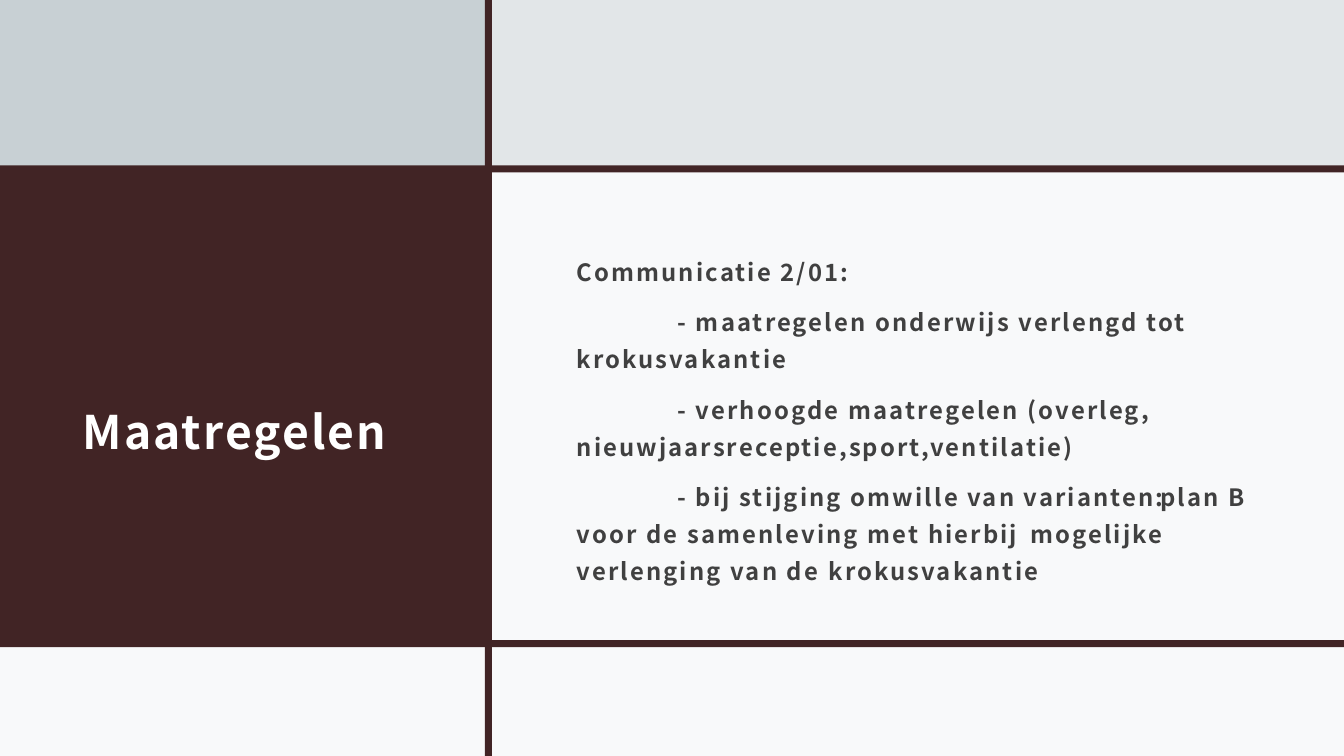
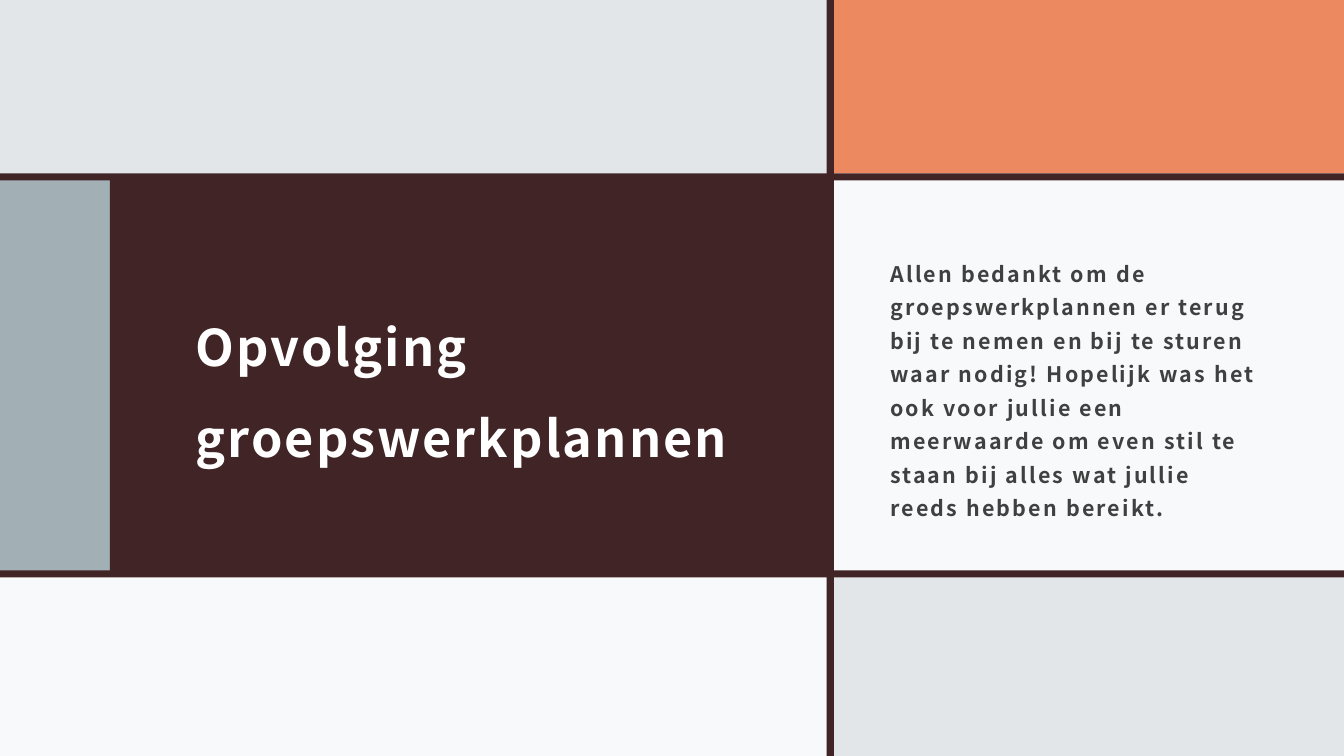
"""Build two slides with coloured panels, dark grid lines, a title and body text."""

from dataclasses import dataclass

from pptx import Presentation
from pptx.dml.color import RGBColor
from pptx.enum.shapes import MSO_SHAPE
from pptx.enum.text import MSO_ANCHOR
from pptx.util import Inches, Pt

RECTANGLE = MSO_SHAPE.RECTANGLE
MIDDLE = MSO_ANCHOR.MIDDLE

WIDTH, HEIGHT = 13.33, 7.5
LINE = 0.07
FONT = "Noto Sans CJK JP"
LETTER_SPACING = "150"

DARK = "412425"
PALE = "E2E6E8"
LIGHT = "F8F9FA"
MIST = "C8D0D4"
SLATE = "A2AFB5"
ORANGE = "ED8961"
WHITE = "FFFFFF"
GREY = "404040"


@dataclass(frozen=True)
class Box:
    left: float
    top: float
    width: float
    height: float


@dataclass(frozen=True)
class Panel:
    box: Box
    fill: str


@dataclass(frozen=True)
class Style:
    color: str
    line_spacing: float
    space_before: float = 0


@dataclass(frozen=True)
class TextBlock:
    box: Box
    size: float
    paragraphs: tuple[str, ...]
    indent: float = 0


@dataclass(frozen=True)
class SlideContent:
    panels: tuple[Panel, ...]
    column_line: float
    row_lines: tuple[float, ...]
    title: TextBlock
    body: TextBlock


TITLE_STYLE = Style(WHITE, 1.5)
BODY_STYLE = Style(GREY, 1.3, 9.3)

SLIDES = (
    SlideContent(
        panels=(
            Panel(Box(0, 1.64, 4.84, 4.78), DARK),
            Panel(Box(0, 0, 4.84, 1.66), MIST),
            Panel(Box(4.84, 1.66, 8.49, 4.76), LIGHT),
            Panel(Box(0, 6.41, WIDTH, 1.09), LIGHT),
        ),
        column_line=4.81,
        row_lines=(1.64, 6.35),
        title=TextBlock(Box(0.7, 2.14, 3.73, 3.98), 33, ("Maatregelen",)),
        body=TextBlock(
            Box(5.6, 2.14, 7.03, 3.98),
            17,
            (
                "Communicatie 2/01:",
                "- maatregelen onderwijs verlengd tot krokusvakantie",
                "- verhoogde maatregelen (overleg, nieuwjaarsreceptie,sport,ventilatie)",
                "- bij stijging omwille van varianten: \tplan B voor de samenleving "
                "met hierbij \tmogelijke verlenging van de \tkrokusvakantie",
            ),
            indent=1,
        ),
    ),
    SlideContent(
        panels=(
            Panel(Box(0, 1.77, 1.09, 3.91), SLATE),
            Panel(Box(1.09, 1.77, 7.16, 3.91), DARK),
            Panel(Box(8.24, 0, 5.09, 1.78), ORANGE),
            Panel(Box(8.27, 1.72, 5.06, 3.98), LIGHT),
            Panel(Box(0, 5.72, 8.2, 1.78), LIGHT),
        ),
        column_line=8.2,
        row_lines=(1.72, 5.66),
        title=TextBlock(
            Box(1.82, 2.21, 5.91, 3.04), 36, ("Opvolging groepswerkplannen",)
        ),
        body=TextBlock(
            Box(8.71, 2.34, 3.92, 2.98),
            15.3,
            (
                "Allen bedankt om de groepswerkplannen er terug bij te nemen en "
                "bij te sturen waar nodig! Hopelijk was het ook voor jullie een "
                "meerwaarde om even stil te staan bij alles wat jullie reeds "
                "hebben bereikt.",
            ),
        ),
    ),
)


def rgb(color: str) -> RGBColor:
    return RGBColor.from_string(color)


def place(box: Box) -> tuple[int, int, int, int]:
    return Inches(box.left), Inches(box.top), Inches(box.width), Inches(box.height)


def draw_panel(slide, panel: Panel) -> None:
    shape = slide.shapes.add_shape(RECTANGLE, *place(panel.box))
    shape.shadow.inherit = False
    shape.fill.solid()
    shape.fill.fore_color.rgb = rgb(panel.fill)
    shape.line.fill.background()


def draw_text(slide, block: TextBlock, style: Style) -> None:
    frame = slide.shapes.add_textbox(*place(block.box)).text_frame
    frame.word_wrap = True
    frame.vertical_anchor = MIDDLE
    frame.margin_left = frame.margin_right = frame.margin_top = Inches(0.12)
    frame.margin_bottom = Inches(0.1)
    for index, text in enumerate(block.paragraphs):
        paragraph = frame.paragraphs[0] if index == 0 else frame.add_paragraph()
        paragraph.text = text
        paragraph.line_spacing = style.line_spacing
        properties = paragraph._p.get_or_add_pPr()
        if index:
            paragraph.space_before = Pt(style.space_before)
            properties.set("marL", "0")
            properties.set("indent", str(Inches(block.indent)))
        font = paragraph.font
        font.name = FONT
        font.size = Pt(block.size)
        font.bold = True
        font.color.rgb = rgb(style.color)
        properties.get_or_add_defRPr().set("spc", LETTER_SPACING)


def draw_slide(presentation, content: SlideContent) -> None:
    slide = presentation.slides.add_slide(presentation.slide_layouts[6])
    slide.background.fill.solid()
    slide.background.fill.fore_color.rgb = rgb(PALE)
    for panel in content.panels:
        draw_panel(slide, panel)
    for top in content.row_lines:
        draw_panel(slide, Panel(Box(0, top, WIDTH, LINE), DARK))
    draw_panel(slide, Panel(Box(content.column_line, 0, LINE, HEIGHT), DARK))
    draw_text(slide, content.title, TITLE_STYLE)
    draw_text(slide, content.body, BODY_STYLE)


def main() -> None:
    presentation = Presentation()
    presentation.slide_width = Inches(WIDTH)
    presentation.slide_height = Inches(HEIGHT)
    for content in SLIDES:
        draw_slide(presentation, content)
    presentation.save("out.pptx")


if __name__ == "__main__":
    main()
